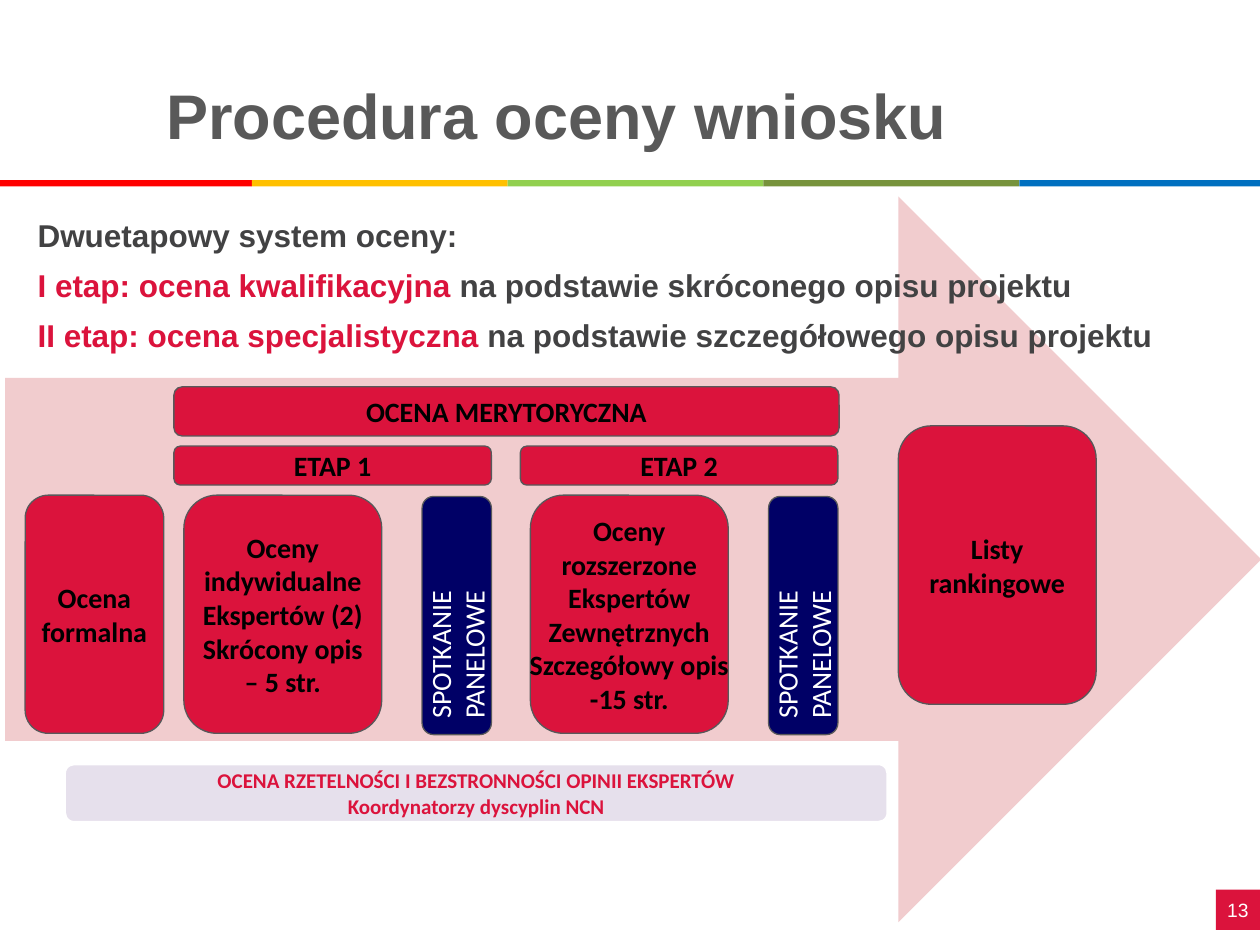
from dataclasses import dataclass

from pptx import Presentation
from pptx.dml.color import RGBColor
from pptx.enum.shapes import MSO_SHAPE as Kind
from pptx.enum.text import MSO_ANCHOR as Anchor, PP_ALIGN as Align
from pptx.util import Inches, Pt

RED = RGBColor(0xDB, 0x13, 0x3C)
NAVY = RGBColor(0x00, 0x00, 0x66)
PINK = RGBColor(0xF1, 0xCC, 0xCE)
LILAC = RGBColor(0xE6, 0xE0, 0xEC)
EDGE = RGBColor(0x58, 0x58, 0x5A)
GREY = RGBColor(0x59, 0x59, 0x59)
DARK = RGBColor(0x42, 0x42, 0x43)
BLACK = RGBColor(0, 0, 0)
WHITE = RGBColor(0xFF, 0xFF, 0xFF)
BAND = [
    RGBColor(0xFF, 0x00, 0x00),
    RGBColor(0xFF, 0xC0, 0x00),
    RGBColor(0x92, 0xD0, 0x50),
    RGBColor(0x77, 0x93, 0x3C),
    RGBColor(0x00, 0x70, 0xC0),
]


@dataclass
class Box:
    left: float
    top: float
    width: float
    height: float
    lines: tuple[str, ...] = ()
    fill: RGBColor = RED
    color: RGBColor = BLACK
    size: int = 16
    bold: bool = True
    font: str = "Calibri"
    edge: RGBColor | None = EDGE
    weight: float = 0.75
    kind: Kind = Kind.ROUNDED_RECTANGLE
    upright: bool = False


@dataclass
class Stage:
    left: float
    name: str
    lines: tuple[str, ...]


def style(para, size: int, color: RGBColor, bold: bool, name: str) -> None:
    font = para.font
    font.size, font.bold, font.name = Pt(size), bold, name
    font.color.rgb = color


def draw(slide, box: Box) -> None:
    shape = slide.shapes.add_shape(
        box.kind, Inches(box.left), Inches(box.top),
        Inches(box.width), Inches(box.height))
    shape.shadow.inherit = False
    shape.fill.solid()
    shape.fill.fore_color.rgb = box.fill
    if box.edge is None:
        shape.line.fill.background()
    else:
        shape.line.color.rgb = box.edge
        shape.line.width = Pt(box.weight)
    if not box.lines:
        return
    frame = shape.text_frame
    frame.word_wrap = box.upright
    frame.vertical_anchor = Anchor.MIDDLE
    if box.upright:
        # Text runs from bottom to top
        frame._txBody.bodyPr.set("vert", "vert270")
        frame.margin_left = frame.margin_right = Inches(0.02)
        frame.margin_bottom = Inches(0.1)
    for i, line in enumerate(box.lines):
        para = frame.add_paragraph() if i else frame.paragraphs[0]
        para.text = line
        para.alignment = Align.LEFT if box.upright else Align.CENTER
        style(para, box.size, box.color, box.bold, box.font)


def add_text(slide, left: float, top: float, width: float, height: float):
    frame = slide.shapes.add_textbox(
        Inches(left), Inches(top), Inches(width), Inches(height)).text_frame
    frame.word_wrap = True
    return frame


def draw_stage(slide, stage: Stage) -> None:
    x = stage.left
    draw(slide, Box(x + 0.08, 3.93, 1.57, 1.89, stage.lines))
    draw(slide, Box(x + 1.97, 3.94, 0.55, 1.89, ("SPOTKANIE", "PANELOWE"),
                    fill=NAVY, color=WHITE, bold=False, upright=True))
    draw(slide, Box(x, 3.54, 2.52, 0.31, (stage.name,)))


def main() -> None:
    deck = Presentation()
    deck.slide_width, deck.slide_height = Inches(10), Inches(7.5)
    slide = deck.slides.add_slide(deck.slide_layouts[6])

    # Page number
    draw(slide, Box(9.65, 7.06, 0.35, 0.32, ("13",), color=WHITE, size=11,
                    bold=False, font="Arial", edge=None, kind=Kind.RECTANGLE))

    # Colour band, ending at the slide edge
    step, start = 2.03, -0.03
    for i, color in enumerate(BAND):
        left = start + i * step
        draw(slide, Box(left, 1.43, min(step, 10 - left), 0.05, fill=color,
                        edge=None, kind=Kind.RECTANGLE))

    # Title
    frame = add_text(slide, 1.22, 0.52, 8.78, 0.77)
    frame.vertical_anchor = Anchor.MIDDLE
    title = frame.paragraphs[0]
    title.text = "Procedura oceny wniosku"
    style(title, 36, GREY, True, "Arial")

    # Process arrow and its boxes
    draw(slide, Box(0.04, 1.56, 9.97, 5.76, fill=PINK, edge=None,
                    kind=Kind.RIGHT_ARROW))
    draw(slide, Box(0.2, 3.93, 1.1, 1.89, ("Ocena", "formalna")))
    draw(slide, Box(7.13, 3.38, 1.57, 2.21, ("Listy", "rankingowe")))
    draw(slide, Box(1.38, 3.07, 5.28, 0.39, ("OCENA MERYTORYCZNA",)))
    stages = [
        Stage(1.38, "ETAP 1", ("Oceny", "indywidualne", "Ekspertów (2)",
                               "Skrócony opis", "– 5 str.")),
        Stage(4.13, "ETAP 2", ("Oceny", "rozszerzone", "Ekspertów",
                               "Zewnętrznych", "Szczegółowy opis",
                               "-15 str.")),
    ]
    for stage in stages:
        draw_stage(slide, stage)

    # Review note
    draw(slide, Box(0.51, 6.06, 6.54, 0.47, (
        "OCENA RZETELNOŚCI I BEZSTRONNOŚCI OPINII EKSPERTÓW",
        "Koordynatorzy dyscyplin NCN"),
        fill=LILAC, color=RED, size=12, edge=WHITE, weight=2))

    # Summary of the two stages
    frame = add_text(slide, 0.2, 1.65, 9.14, 1.57)
    rows = [
        [("Dwuetapowy system oceny:", DARK)],
        [("I etap: ocena kwalifikacyjna ", RED),
         ("na podstawie skróconego opisu projektu", DARK)],
        [("II etap: ocena specjalistyczna ", RED),
         ("na podstawie szczegółowego opisu projektu", DARK)],
    ]
    for i, row in enumerate(rows):
        para = frame.add_paragraph() if i else frame.paragraphs[0]
        para.alignment = Align.JUSTIFY
        para.line_spacing = 1.05
        para.space_after = Pt(6)
        style(para, 18, DARK, True, "Arial")
        for text, color in row:
            run = para.add_run()
            run.text = text
            run.font.color.rgb = color

    deck.save("out.pptx")


if __name__ == "__main__":
    main()
